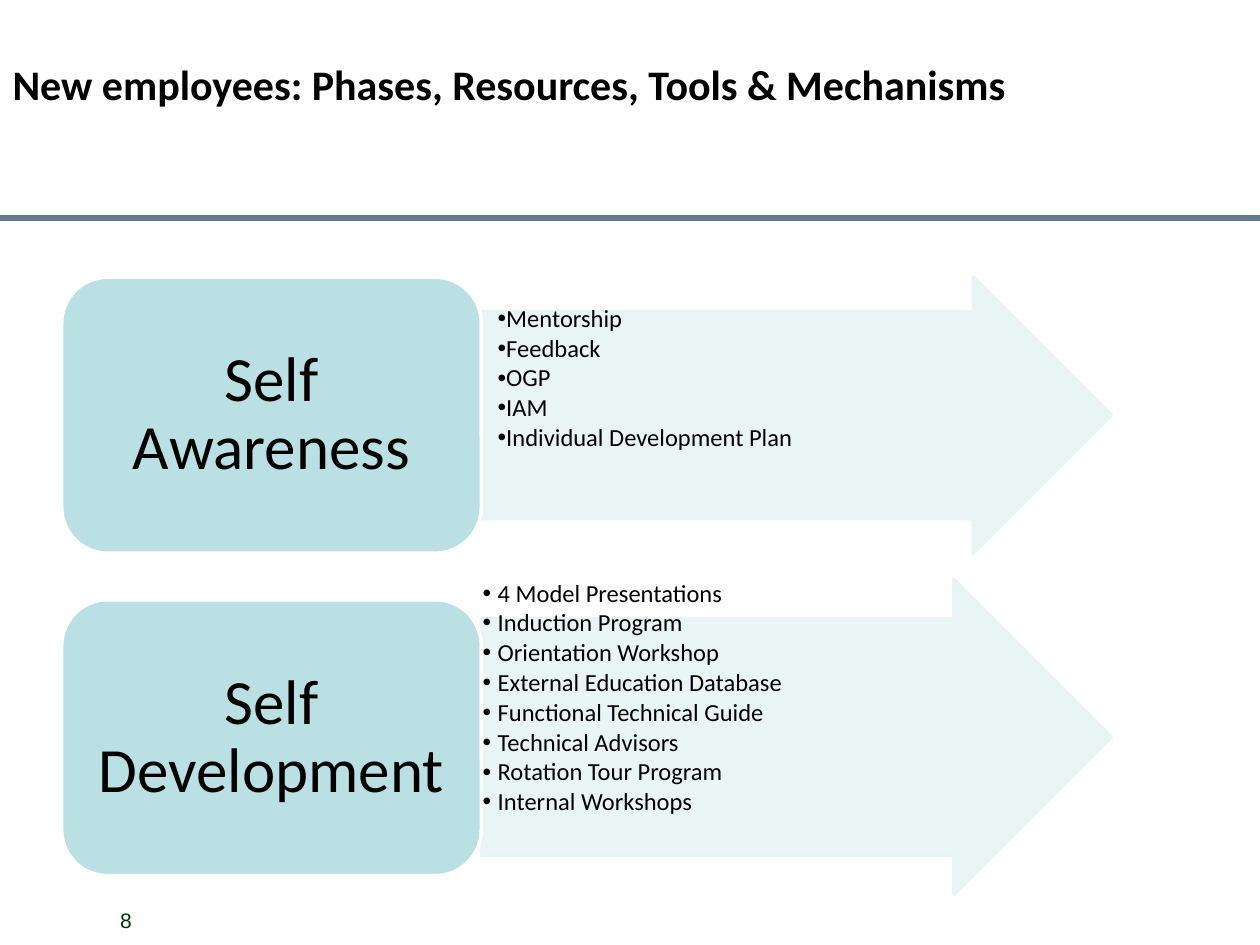
from lxml import etree
from pptx import Presentation
from pptx.dml.color import RGBColor
from pptx.enum.shapes import MSO_CONNECTOR as Connector, MSO_SHAPE as Shape
from pptx.enum.text import MSO_ANCHOR as Anchor, MSO_AUTO_SIZE as AutoSize, PP_ALIGN as Align
from pptx.oxml.ns import qn
from pptx.util import Inches, Pt


def paint(fill, color, opacity=100):
    fill.solid()
    fill.fore_color.rgb = RGBColor.from_string(color)
    if opacity < 100:
        for tint in fill._xPr.iter(qn("a:srgbClr")):
            etree.SubElement(tint, qn("a:alpha"), val=str(opacity * 1000))


def write(shape, lines, size, color="000000", font="Calibri", bold=False, align=Align.LEFT,
          anchor=Anchor.MIDDLE, inset=(0.1, 0.05), spacing=1.0, after=0, bullet=None):
    frame = shape.text_frame
    frame.word_wrap = True
    frame.auto_size = AutoSize.NONE
    frame.vertical_anchor = anchor
    frame.margin_left = frame.margin_right = Inches(inset[0])
    frame.margin_top = frame.margin_bottom = Inches(inset[1])
    for index, line in enumerate(lines):
        para = frame.add_paragraph() if index else frame.paragraphs[0]
        if bullet:
            properties = para._p.get_or_add_pPr()
            properties.set("marL", str(Inches(bullet[0])))
            properties.set("indent", str(Inches(bullet[1])))
            etree.SubElement(properties, qn("a:buChar"), char="•")
        para.alignment = align
        para.line_spacing = spacing
        para.space_before = Pt(0)
        para.space_after = Pt(after)
        span = para.add_run()
        span.text = line
        span.font.size = Pt(size)
        span.font.name = font
        span.font.bold = bold
        paint(span.font.fill, color)


deck = Presentation()
deck.slide_width, deck.slide_height = Inches(10), Inches(7.5)
cell = deck.slide_width // 100
page = deck.slides.add_slide(deck.slide_layouts[3])
title, *lists = page.placeholders

rule = page.shapes.add_connector(Connector.STRAIGHT, 0, round(17.3 * cell),
                                 deck.slide_width, round(17.3 * cell))
paint(rule.line.fill, "647A88")
rule.line.width = Pt(3)
etree.SubElement(rule._element.spPr, qn("a:effectLst"))

number = page.shapes.add_textbox(5 * cell, round(71.5 * cell), 10 * cell, 3 * cell)
write(number, ["8"], 12, color="003300", font="Arial", align=Align.CENTER)

title.left, title.top = 0, round(0.8 * cell)
title.width, title.height = deck.slide_width, round(11.7 * cell)
write(title, ["New employees: Phases, Resources, Tools & Mechanisms"], 24, bold=True)

phases = [
    ("Self Awareness", 22, 22, 21.9, 24.2, 0,
     ["Mentorship", "Feedback", "OGP", "IAM", "Individual Development Plan"]),
    ("Self Development", 47.6, 46, 25, 46, -0.12,
     ["4 Model Presentations", "Induction Program", "Orientation Workshop",
      "External Education Database", "Functional Technical Guide", "Technical Advisors",
      "Rotation Tour Program", "Internal Workshops"]),
]
label_left, label_width, label_height = 4.9, 33.3, 21.9
arrow_left, arrow_width = label_left + label_width, 50

for body, (name, label_top, arrow_top, arrow_height, list_top, indent, tools) in zip(lists, phases):
    arrow = page.shapes.add_shape(Shape.RIGHT_ARROW, *(
        round(cell * share) for share in (arrow_left, arrow_top, arrow_width, arrow_height)))
    arrow.adjustments[0], arrow.adjustments[1] = 0.75, 0.5
    paint(arrow.fill, "E7F3F4", 90)
    paint(arrow.line.fill, "E7F3F4", 90)

    label = page.shapes.add_shape(Shape.ROUNDED_RECTANGLE, *(
        round(cell * share) for share in (label_left, label_top, label_width, label_height)))
    paint(label.fill, "BBE0E3")
    paint(label.line.fill, "FFFFFF")
    write(label, [name], 36, align=Align.CENTER, inset=(0.04, 0), spacing=0.9)

    for shape in (arrow, label):
        shape.line.width = Pt(2)
        shape.shadow.inherit = False

    page.shapes._spTree.append(body._element)
    body.left, body.top, body.width, body.height = (
        round(cell * share) for share in
        (arrow_left, list_top, arrow_width, arrow_top + arrow_height - list_top))
    write(body, tools, 14, anchor=Anchor.TOP, inset=(0.01, 0.01), spacing=0.9, after=1.9,
          bullet=(0.12, indent))

deck.save("out.pptx")
